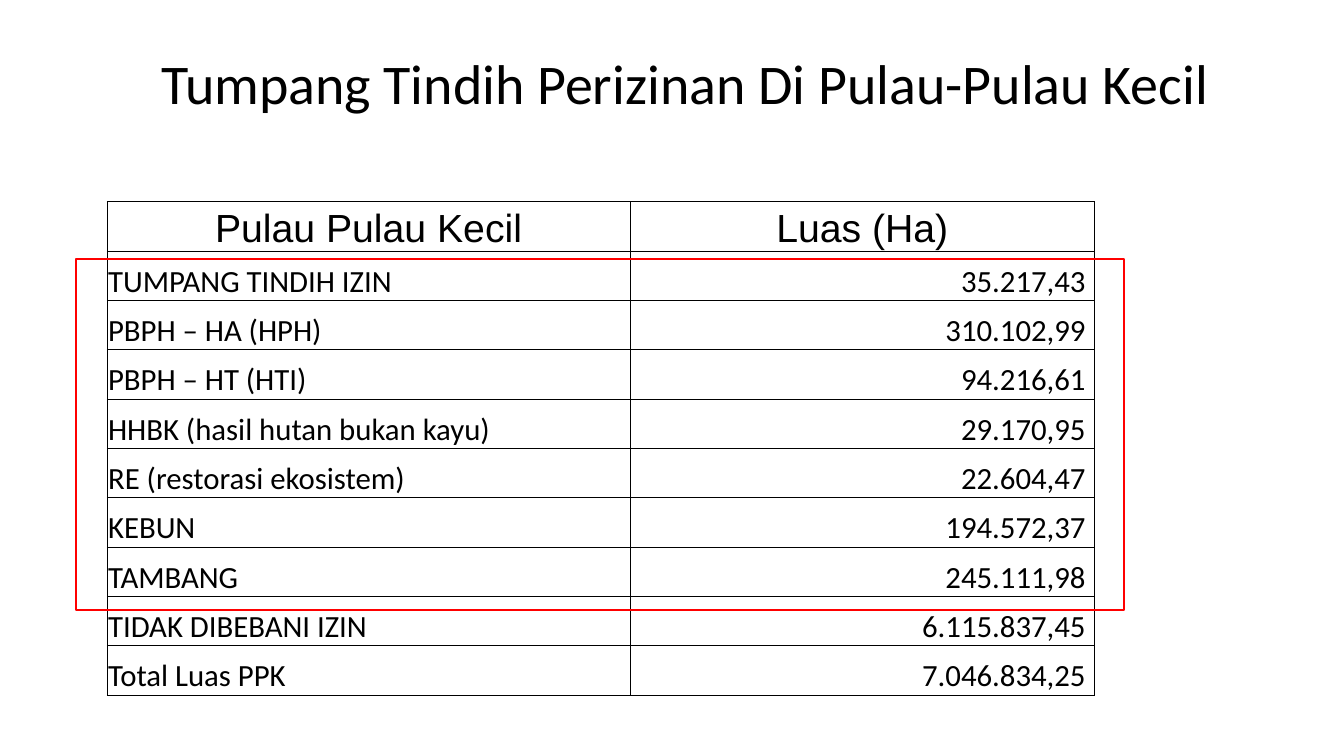
import pptx
import pptx.dml.color
import pptx.enum.shapes
import pptx.enum.text
import pptx.oxml
import pptx.oxml.ns
import pptx.util

BLACK = pptx.dml.color.RGBColor(0x00, 0x00, 0x00)
RED = pptx.dml.color.RGBColor(0xFF, 0x00, 0x00)

ALIGN = pptx.enum.text.PP_ALIGN
ANCHOR = pptx.enum.text.MSO_ANCHOR

HEADINGS = ("Pulau Pulau Kecil", "Luas (Ha)")
AREAS = (
    ("TUMPANG TINDIH IZIN", "35.217,43"),
    ("PBPH – HA (HPH)", "310.102,99"),
    ("PBPH – HT (HTI)", "94.216,61"),
    ("HHBK (hasil hutan bukan kayu)", "29.170,95"),
    ("RE (restorasi ekosistem)", "22.604,47"),
    ("KEBUN", "194.572,37"),
    ("TAMBANG", "245.111,98"),
    ("TIDAK DIBEBANI IZIN", "6.115.837,45"),
    ("Total Luas PPK", "7.046.834,25"),
)


class SlideBuilder:
    """Holds the style and the slide; lengths are percent of the slide's size."""

    body_font, heading_font = "Calibri", "Arial"
    title_size, heading_size, body_size = 40, 28, 22
    border_width = pptx.util.Pt(0.5)
    cell_margin = pptx.util.Inches(0.01)
    value_margin = pptx.util.Inches(0.09)

    def __init__(self, deck):
        self.deck = deck
        self.slide = deck.slides.add_slide(deck.slide_layouts[5])

    def across(self, percent):
        return round(self.deck.slide_width * percent / 100)

    def down(self, percent):
        return round(self.deck.slide_height * percent / 100)

    def area(self, left, top, width, height):
        return self.across(left), self.down(top), self.across(width), self.down(height)

    def set_text(self, frame, text, size, font, align):
        frame.text = text
        para = frame.paragraphs[0]
        para.alignment = align
        for span in para.runs:
            span.font.size = pptx.util.Pt(size)
            span.font.name = font
            span.font.bold = False
            span.font.color.rgb = BLACK

    def title(self, text, *place):
        box = self.slide.shapes.title
        box.left, box.top, box.width, box.height = self.area(*place)
        frame = box.text_frame
        self.set_text(frame, text, self.title_size, self.body_font, ALIGN.LEFT)
        frame.word_wrap = True
        frame.auto_size = pptx.enum.text.MSO_AUTO_SIZE.NONE
        frame.vertical_anchor = ANCHOR.MIDDLE
        frame.paragraphs[0].line_spacing = 0.9

    def border(self, cell):
        properties = cell._tc.get_or_add_tcPr()
        for side in "LRTB":
            properties.append(pptx.oxml.parse_xml(
                f'<a:ln{side} {pptx.oxml.ns.nsdecls("a")} w="{self.border_width}">'
                f'<a:solidFill><a:srgbClr val="{BLACK}"/></a:solidFill></a:ln{side}>'))

    def table(self, rows, column_shares, left, top, row_height):
        place = self.area(left, top, sum(column_shares), row_height * len(rows))
        table = self.slide.shapes.add_table(len(rows), len(column_shares), *place).table
        table.first_row = table.horz_banding = False
        for column, share in zip(table.columns, column_shares):
            column.width = self.across(share)
        for row_index, texts in enumerate(rows):
            table.rows[row_index].height = self.down(row_height)
            for column_index, text in enumerate(texts):
                cell = table.cell(row_index, column_index)
                self.border(cell)
                cell.fill.background()
                cell.vertical_anchor = ANCHOR.BOTTOM
                cell.margin_left = cell.margin_right = cell.margin_top = self.cell_margin
                cell.margin_bottom = 0
                if row_index == 0:
                    style = self.heading_size, self.heading_font, ALIGN.CENTER
                elif column_index == 0:
                    style = self.body_size, self.body_font, ALIGN.LEFT
                else:
                    style = self.body_size, self.body_font, ALIGN.RIGHT
                    cell.margin_right = self.value_margin
                self.set_text(cell.text_frame, text, *style)

    def frame(self, *place):
        box = self.slide.shapes.add_shape(
            pptx.enum.shapes.MSO_SHAPE.RECTANGLE, *self.area(*place))
        box.shadow.inherit = False
        box.fill.background()
        box.line.color.rgb = RED
        box.line.width = pptx.util.Pt(1.5)


def main():
    deck = pptx.Presentation()
    deck.slide_width = pptx.util.Inches(13.33)
    deck.slide_height = pptx.util.Inches(7.5)
    page = SlideBuilder(deck)

    # Title
    page.title("Tumpang Tindih Perizinan Di Pulau-Pulau Kecil", 11.25, 5.07, 82.37, 12.8)

    # Table of areas
    page.table((HEADINGS, *AREAS), (38.9, 34.58), 7.97, 26.67, 6.53)

    # Red frame around the permit rows
    page.frame(5.63, 34.27, 78.02, 46.4)

    deck.save("out.pptx")


if __name__ == "__main__":
    main()
